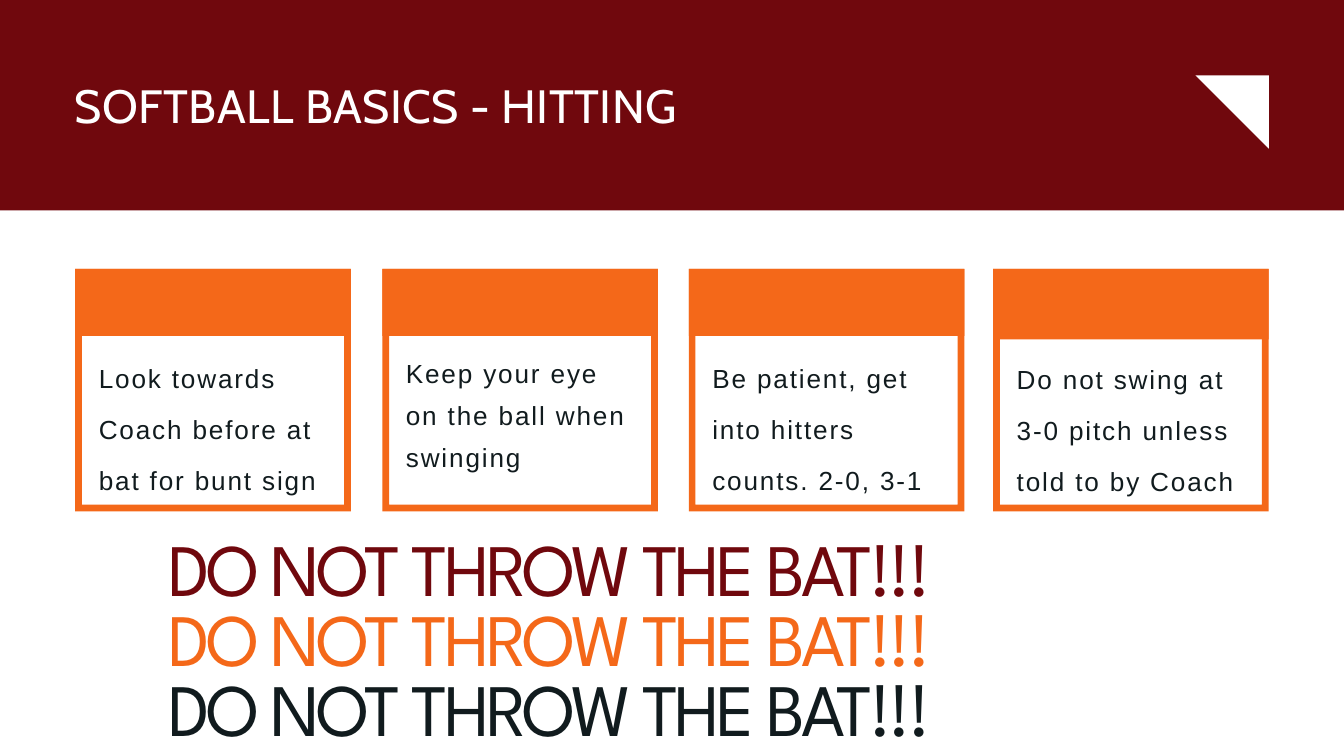
"""Builds a softball slide with four hitting tips and a triple warning."""
import pptx
import pptx.dml.color
import pptx.enum.shapes
import pptx.enum.text
import pptx.util

MAROON = pptx.dml.color.RGBColor(0x70, 0x08, 0x0D)
ORANGE = pptx.dml.color.RGBColor(0xF4, 0x68, 0x19)
INK = pptx.dml.color.RGBColor(0x11, 0x1B, 0x1E)
WHITE = pptx.dml.color.RGBColor(0xFF, 0xFF, 0xFF)

COLUMNS, ROWS = 20, 11.25
CELL = pptx.util.Inches(1)
CARD_TOP, CARD_WIDTH, CARD_HEIGHT, BORDER = 4, 4.1, 3.61, 0.1

TITLE = {"font": {"name": "Cabin", "size": pptx.util.Pt(50)}, "spacing": 0.5}
TIP = {"font": {"name": "Arial", "size": pptx.util.Pt(28)}, "spacing": 2}
WARNING = {"font": {"name": "League Spartan", "size": pptx.util.Pt(79.2)}, "spacing": -4}

CARDS = [
    {"left": 1.12, "header": 1, "text_top": 5.09, "leading": 54.9,
     "tip": "Look towards Coach before at bat for bunt sign"},
    {"left": 5.69, "header": 1, "text_top": 5.16, "leading": 45.1,
     "tip": "Keep your eye on the ball when swinging"},
    {"left": 10.25, "header": 1, "text_top": 5.09, "leading": 54.9,
     "tip": "Be patient, get into hitters counts. 2-0, 3-1"},
    {"left": 14.78, "header": 1.05, "text_top": 5.11, "leading": 54.9,
     "tip": "Do not swing at 3-0 pitch unless told to by Coach"},
]


def grid(*cells):
    """Turns grid columns or rows into slide lengths."""
    return [round(cell * CELL) for cell in cells]


def paint(shape, color):
    """Gives a shape a plain fill without line or shadow."""
    shape.shadow.inherit = False
    shape.fill.solid()
    shape.fill.fore_color.rgb = color
    shape.line.fill.background()


def add_block(slide, box, color):
    """Adds a filled rectangle."""
    kind = pptx.enum.shapes.MSO_SHAPE.RECTANGLE
    paint(slide.shapes.add_shape(kind, *grid(*box)), color)


def add_outline(slide, contours, color):
    """Adds a filled freeform made of closed contours."""
    first, *others = contours
    builder = slide.shapes.build_freeform(*grid(*first[0]))
    builder.add_line_segments([grid(*point) for point in first[1:]], close=True)
    for contour in others:
        builder.move_to(*grid(*contour[0]))
        builder.add_line_segments([grid(*point) for point in contour[1:]], close=True)
    paint(builder.convert_to_shape(), color)


def add_text(slide, box, lines, style, leading):
    """Adds a text box with one paragraph for each line and color."""
    frame = slide.shapes.add_textbox(*grid(*box)).text_frame
    settings = {
        "word_wrap": True,
        "auto_size": pptx.enum.text.MSO_AUTO_SIZE.SHAPE_TO_FIT_TEXT,
        "margin_left": 0, "margin_right": 0, "margin_top": 0, "margin_bottom": 0,
    }
    for name, value in settings.items():
        setattr(frame, name, value)
    for index, (text, color) in enumerate(lines):
        paragraph = frame.add_paragraph() if index else frame.paragraphs[0]
        paragraph.line_spacing = pptx.util.Pt(leading)
        run = paragraph.add_run()
        run.text = text
        for name, value in style["font"].items():
            setattr(run.font, name, value)
        run.font.color.rgb = color
        run._r.get_or_add_rPr().set("spc", str(round(style["spacing"] * 100)))


def add_card(slide, left, header, text_top, leading, tip):
    """Adds a framed card with a header band and a tip."""
    right, bottom = left + CARD_WIDTH, CARD_TOP + CARD_HEIGHT
    outer = [(left, CARD_TOP), (left, bottom), (right, bottom), (right, CARD_TOP)]
    inner = [(right - BORDER, bottom - BORDER), (left + BORDER, bottom - BORDER),
             (left + BORDER, CARD_TOP + BORDER), (right - BORDER, CARD_TOP + BORDER)]
    add_outline(slide, [outer, inner], ORANGE)
    add_block(slide, (left, CARD_TOP, CARD_WIDTH, header), ORANGE)
    add_text(slide, (left + 0.35, text_top, 3.4, 2.13), [(tip, INK)], TIP, leading)


def main():
    """Builds and saves the slide."""
    presentation = pptx.Presentation()
    presentation.slide_width, presentation.slide_height = grid(COLUMNS, ROWS)
    slide = presentation.slides.add_slide(presentation.slide_layouts[6])
    add_block(slide, (-0.67, -0.56, 20.93, 3.69), MAROON)
    add_text(slide, (1.11, 1.06, 15.83, 0.9),
             [("SOFTBALL BASICS - HITTING", WHITE)], TITLE, 66.5)
    add_outline(slide, [[(17.79, 1.12), (18.88, 1.12), (18.88, 2.21)]], WHITE)
    for card in CARDS:
        add_card(slide, **card)
    add_text(slide, (2.51, 8.05, 14.56, 3.2),
             [("DO NOT THROW THE BAT!!!", color) for color in (MAROON, ORANGE, INK)],
             WARNING, 75.2)
    presentation.save("out.pptx")


if __name__ == "__main__":
    main()
